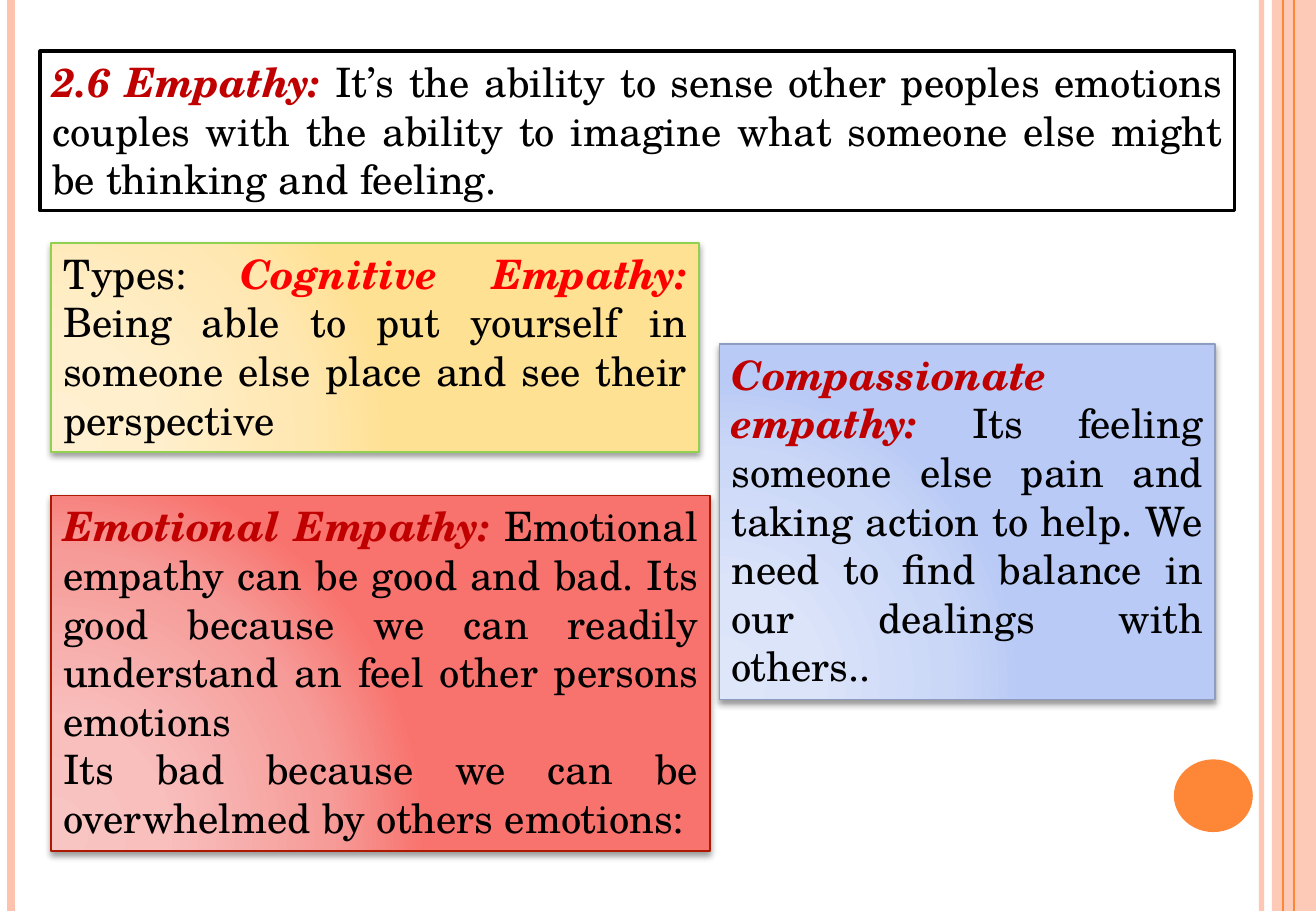
from dataclasses import dataclass

from lxml.etree import SubElement
from pptx import Presentation
from pptx.dml.color import RGBColor as Rgb
from pptx.enum.shapes import MSO_CONNECTOR as Link, MSO_SHAPE as Kind
from pptx.enum.text import MSO_ANCHOR as Anchor, MSO_AUTO_SIZE as Fit, PP_ALIGN as Align
from pptx.oxml.ns import qn
from pptx.shapes.autoshape import Shape
from pptx.slide import Slide
from pptx.util import Cm, Pt


@dataclass(frozen=True)
class Theme:
    font: str = "TeX Gyre Schola"
    size: float = 24
    ink: str = "000000"
    paper: str = "FFFFFF"
    deep: str = "C00000"
    bright: str = "FF0000"
    peach: str = "FEC3AE"
    orange: str = "FE8637"
    sand: tuple[str, ...] = ("FFF0D1", "FFEFCC", "FFE7B1", "FFE193")
    rose: tuple[str, ...] = ("F8C5C3", "F8BFBD", "F69B98", "F8736E")
    sky: tuple[str, ...] = ("DEE6FA", "DBE4F9", "CAD7F7", "B8CAF5")
    green: str = "92D050"
    rust: str = "AC1800"
    slate: str = "8D9CBF"


@dataclass(frozen=True)
class Box:
    left: float
    top: float
    width: float
    height: float

    def place(self) -> tuple[Cm, Cm, Cm, Cm]:
        return Cm(self.left), Cm(self.top), Cm(self.width), Cm(self.height)


@dataclass(frozen=True)
class Stripe:
    x: float
    color: str
    weight: float
    alpha: int = 100


@dataclass(frozen=True)
class Span:
    text: str
    color: str
    strong: bool = False


Lines = list[list[Span]]


@dataclass(frozen=True)
class Card:
    box: Box
    stops: tuple[str, ...]
    edge: str
    lines: Lines


LOOK = Theme()
WIDTH, HEIGHT = 27.51, 19.05
STRIPES = [
    Stripe(26.37, LOOK.peach, 3, 93),
    Stripe(0.23, LOOK.peach, 4.5),
    Stripe(27.05, LOOK.orange, 1.5),
    Stripe(26.82, LOOK.orange, 0.75),
]
BAND = Box(26.59, 0, 0.92, HEIGHT)
DOT = Box(24.54, 15.88, 1.65, 1.52)
HEAD = Box(0.84, 1.07, 24.97, 3.33)
HEAD_TEXT: Lines = [[
    Span("2.6 Empathy: ", LOOK.deep, True),
    Span("It’s the ability to sense other peoples emotions couples with the ability "
         "to imagine what someone else might be thinking and feeling.", LOOK.ink),
]]
CARDS = [
    Card(Box(1.07, 5.08, 13.54, 4.37), LOOK.sand, LOOK.green, [[
        Span("Types: ", LOOK.ink),
        Span("Cognitive Empathy: ", LOOK.bright, True),
        Span("Being able to put yourself in someone else place and see their "
             "perspective", LOOK.ink),
    ]]),
    Card(Box(1.07, 10.36, 13.77, 7.44), LOOK.rose, LOOK.rust, [[
        Span("Emotional Empathy: ", LOOK.deep, True),
        Span("Emotional empathy can be good and bad. Its good because we can readily "
             "understand an feel other persons emotions", LOOK.ink),
    ], [
        Span("Its bad because we can be overwhelmed by others emotions:", LOOK.ink),
    ]]),
    Card(Box(15.04, 7.19, 10.36, 7.44), LOOK.sky, LOOK.slate, [[
        Span("Compassionate empathy: ", LOOK.deep, True),
        Span("Its feeling someone else pain and taking action to help. We need to find "
             "balance in our dealings with others..", LOOK.ink),
    ]]),
]


def paint(shape: Shape, color: str) -> None:
    shape.fill.solid()
    shape.fill.fore_color.rgb = Rgb.from_string(color)


def edge(shape: Shape, color: str, weight: float) -> None:
    shape.line.color.rgb = Rgb.from_string(color)
    shape.line.width = Pt(weight)


def fade(part, alpha: int) -> None:
    tint = part.find(".//" + qn("a:srgbClr"))
    SubElement(tint, qn("a:alpha"), val=str(alpha * 1000))


def draw_stripe(slide: Slide, stripe: Stripe) -> None:
    line = slide.shapes.add_connector(
        Link.STRAIGHT, Cm(stripe.x), Cm(0), Cm(stripe.x), Cm(HEIGHT))
    edge(line, stripe.color, stripe.weight)
    if stripe.alpha < 100:
        fade(line.element.spPr, stripe.alpha)
    SubElement(line.element.spPr, qn("a:effectLst"))


def draw_plain(slide: Slide, kind: Kind, box: Box, color: str) -> Shape:
    shape = slide.shapes.add_shape(kind, *box.place())
    shape.shadow.inherit = False
    paint(shape, color)
    shape.line.fill.background()
    return shape


def write(shape: Shape, lines: Lines) -> None:
    frame = shape.text_frame
    frame.word_wrap = True
    frame.auto_size = Fit.SHAPE_TO_FIT_TEXT
    frame.vertical_anchor = Anchor.TOP
    for place, spans in enumerate(lines):
        para = frame.add_paragraph() if place else frame.paragraphs[0]
        para.alignment = Align.JUSTIFY
        para.font.name = LOOK.font
        para.font.size = Pt(LOOK.size)
        for span in spans:
            run = para.add_run()
            run.text = span.text
            run.font.color.rgb = Rgb.from_string(span.color)
            if span.strong:
                run.font.bold = run.font.italic = True


def blend(shape: Shape, stops: tuple[str, ...]) -> None:
    shape.fill.gradient()
    grad = shape.element.spPr.find(qn("a:gradFill"))
    for child in list(grad):
        grad.remove(child)
    group = SubElement(grad, qn("a:gsLst"))
    for spot, color in zip((0, 30, 75, 100), stops):
        stop = SubElement(group, qn("a:gs"), pos=str(spot * 1000))
        SubElement(stop, qn("a:srgbClr"), val=color)
    route = SubElement(grad, qn("a:path"), {"path": "circle"})
    SubElement(route, qn("a:fillToRect"), l="5000", t="100000", r="120000", b="10000")


def shade(shape: Shape) -> None:
    shape.shadow.inherit = False
    effects = shape.element.spPr.find(qn("a:effectLst"))
    outer = SubElement(effects, qn("a:outerShdw"), blurRad=str(Pt(4)), dist=str(Pt(2)),
                       dir="5400000", rotWithShape="0")
    SubElement(outer, qn("a:srgbClr"), val=LOOK.ink)
    fade(outer, 40)


def draw_card(slide: Slide, card: Card) -> None:
    shape = slide.shapes.add_shape(Kind.RECTANGLE, *card.box.place())
    blend(shape, card.stops)
    edge(shape, card.edge, 1)
    shade(shape)
    write(shape, card.lines)


def draw_head(slide: Slide) -> None:
    title = slide.shapes.title
    title.left, title.top, title.width, title.height = HEAD.place()
    paint(title, LOOK.paper)
    edge(title, LOOK.ink, 2)
    write(title, HEAD_TEXT)


def main() -> None:
    deck = Presentation()
    deck.slide_width, deck.slide_height = Cm(WIDTH), Cm(HEIGHT)
    slide = deck.slides.add_slide(deck.slide_layouts[5])
    band = draw_plain(slide, Kind.RECTANGLE, BAND, LOOK.peach)
    fade(band.element.spPr, 87)
    for stripe in STRIPES:
        draw_stripe(slide, stripe)
    draw_plain(slide, Kind.OVAL, DOT, LOOK.orange)
    draw_head(slide)
    for card in CARDS:
        draw_card(slide, card)
    deck.save("out.pptx")


if __name__ == "__main__":
    main()
